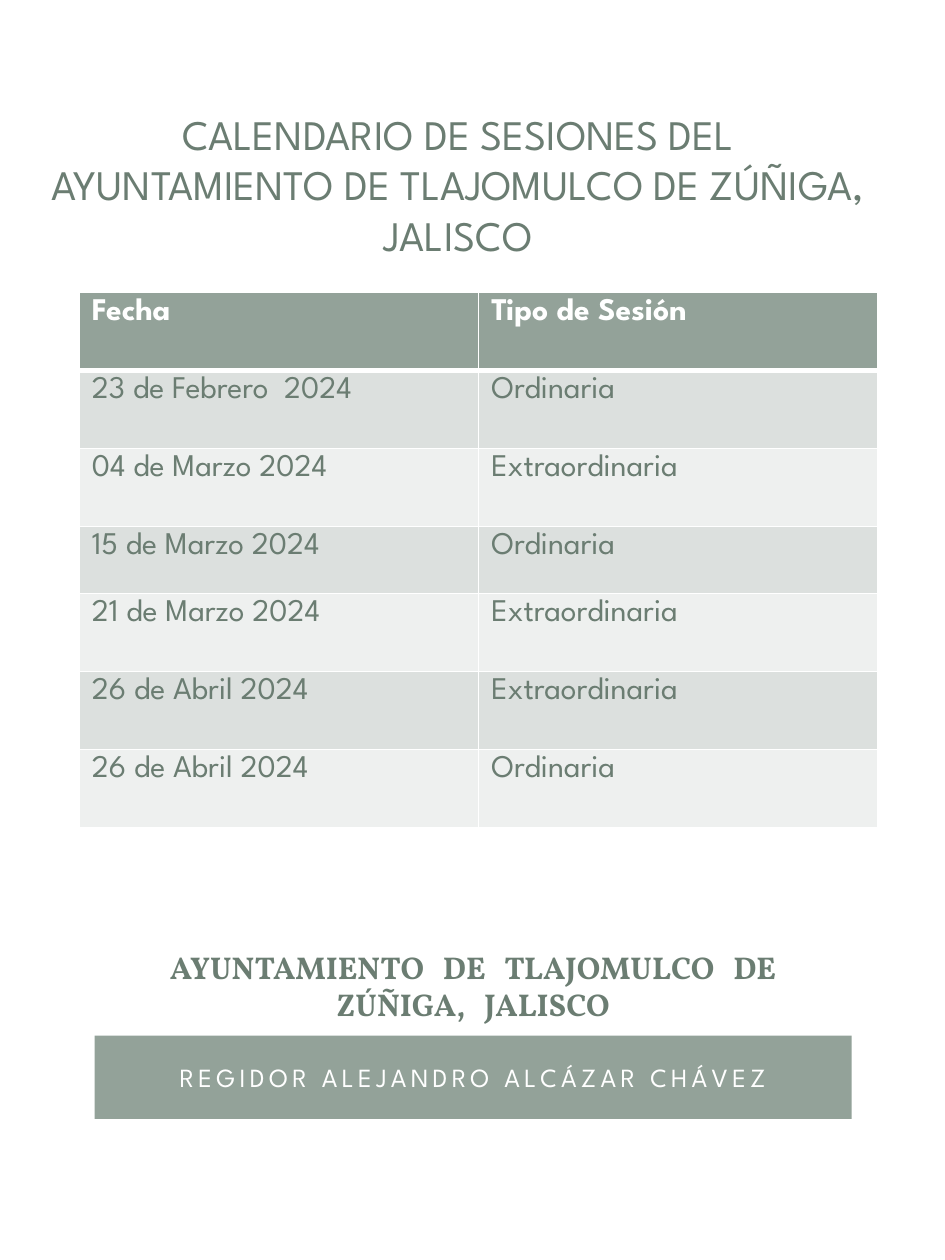
"""Build the council session calendar slide."""
from typing import NamedTuple

from lxml.etree import SubElement
from pptx import Presentation
from pptx.dml.color import RGBColor
from pptx.enum.shapes import MSO_SHAPE as SHAPE
from pptx.enum.text import MSO_ANCHOR as ANCHOR, MSO_AUTO_SIZE as AUTO, PP_ALIGN as ALIGN
from pptx.oxml.ns import qn
from pptx.util import Inches, Pt

WHITE = RGBColor(0xFF, 0xFF, 0xFF)
SAGE = RGBColor(0x93, 0xA2, 0x99)
GREEN = RGBColor(0x6B, 0x7D, 0x72)
BANDS = (RGBColor(0xDC, 0xE0, 0xDE), RGBColor(0xEE, 0xF0, 0xEF))
SANS = "League Spartan"
SERIF = "Vollkorn"


class Box(NamedTuple):
    left: float
    top: float
    width: float
    height: float


class Session(NamedTuple):
    date: str
    kind: str


HEADER = Session("Fecha", "Tipo de Sesión")
SESSIONS = [
    Session("23 de Febrero  2024", "Ordinaria"),
    Session("04 de Marzo 2024", "Extraordinaria"),
    Session("15 de Marzo 2024", "Ordinaria"),
    Session("21 de Marzo 2024", "Extraordinaria"),
    Session("26 de Abril 2024", "Extraordinaria"),
    Session("26 de Abril 2024", "Ordinaria"),
]
ROW_HEIGHTS = (0.62, 0.62, 0.62, 0.53, 0.62, 0.62, 0.62)


def emu(box: Box) -> list:
    return [Inches(v) for v in box]


def write(tf, text: str, align=ALIGN.CENTER, **fmt):
    """Write one formatted run and return it."""
    p = tf.paragraphs[0]
    p.alignment = align
    r = p.add_run()
    r.text = text
    r.font.color.rgb = fmt.pop("color")
    for name, value in fmt.items():
        setattr(r.font, name, value)
    return r


def add_border(cell, side: str, width: float) -> None:
    ln = SubElement(cell._tc.get_or_add_tcPr(), qn(f"a:{side}"), w=str(Pt(width)))
    SubElement(SubElement(ln, qn("a:solidFill")), qn("a:srgbClr"), val=str(WHITE))


def add_sessions(s, box: Box) -> None:
    rows = [HEADER, *SESSIONS]
    table = s.shapes.add_table(len(rows), len(HEADER), *emu(box)).table
    for row, height in zip(table.rows, ROW_HEIGHTS):
        row.height = Inches(height)
    for i, session in enumerate(rows):
        head = i == 0
        for j, text in enumerate(session):
            cell = table.cell(i, j)
            for side in ("lnL", "lnR", "lnT", "lnB"):
                thick = (head and side == "lnB") or (i == 1 and side == "lnT")
                add_border(cell, side, 3 if thick else 1)
            cell.fill.solid()
            cell.fill.fore_color.rgb = SAGE if head else BANDS[(i - 1) % 2]
            write(cell.text_frame, text, ALIGN.LEFT, size=Pt(18), name=SANS,
                  bold=head, color=WHITE if head else GREEN)


def add_band(s, box: Box, text: str) -> None:
    band = s.shapes.add_shape(SHAPE.RECTANGLE, *emu(box))
    band.shadow.inherit = False
    band.fill.solid()
    band.fill.fore_color.rgb = SAGE
    band.line.fill.background()
    tf = band.text_frame
    tf.word_wrap = True
    tf.vertical_anchor = ANCHOR.MIDDLE
    p = tf.paragraphs[0]
    p.space_before = Pt(3)
    r = write(tf, text, size=Pt(15), name=SANS, color=WHITE)
    r.font._element.set("spc", "250")


def set_title(s, box: Box, text: str) -> None:
    title = s.shapes.title
    for name, value in zip(Box._fields, emu(box)):
        setattr(title, name, value)
    tf = title.text_frame
    tf.word_wrap = True
    tf.auto_size = AUTO.NONE
    tf.vertical_anchor = ANCHOR.MIDDLE
    write(tf, text, size=Pt(18), name=SERIF, bold=True, color=GREEN)


def add_heading(s, box: Box, text: str) -> None:
    tf = s.shapes.add_textbox(*emu(box)).text_frame
    tf.word_wrap = True
    tf.auto_size = AUTO.SHAPE_TO_FIT_TEXT
    write(tf, text, size=Pt(24), name=SANS, color=GREEN)


def main() -> None:
    prs = Presentation()
    prs.slide_width, prs.slide_height = Inches(7.5), Inches(10)
    s = prs.slides.add_slide(prs.slide_layouts[5])
    add_band(s, Box(0.75, 8.22, 6.01, 0.66), "REGIDOR ALEJANDRO ALCÁZAR CHÁVEZ")
    set_title(s, Box(0.75, 7.44, 6.01, 0.76),
              "AYUNTAMIENTO   DE   TLAJOMULCO   DE ZÚÑIGA,   JALISCO")
    add_heading(s, Box(0.29, 0.81, 6.69, 1.31),
                "CALENDARIO DE SESIONES DEL AYUNTAMIENTO DE TLAJOMULCO DE ZÚÑIGA, JALISCO")
    add_sessions(s, Box(0.63, 2.32, 6.34, sum(ROW_HEIGHTS)))
    prs.save("out.pptx")


if __name__ == "__main__":
    main()
